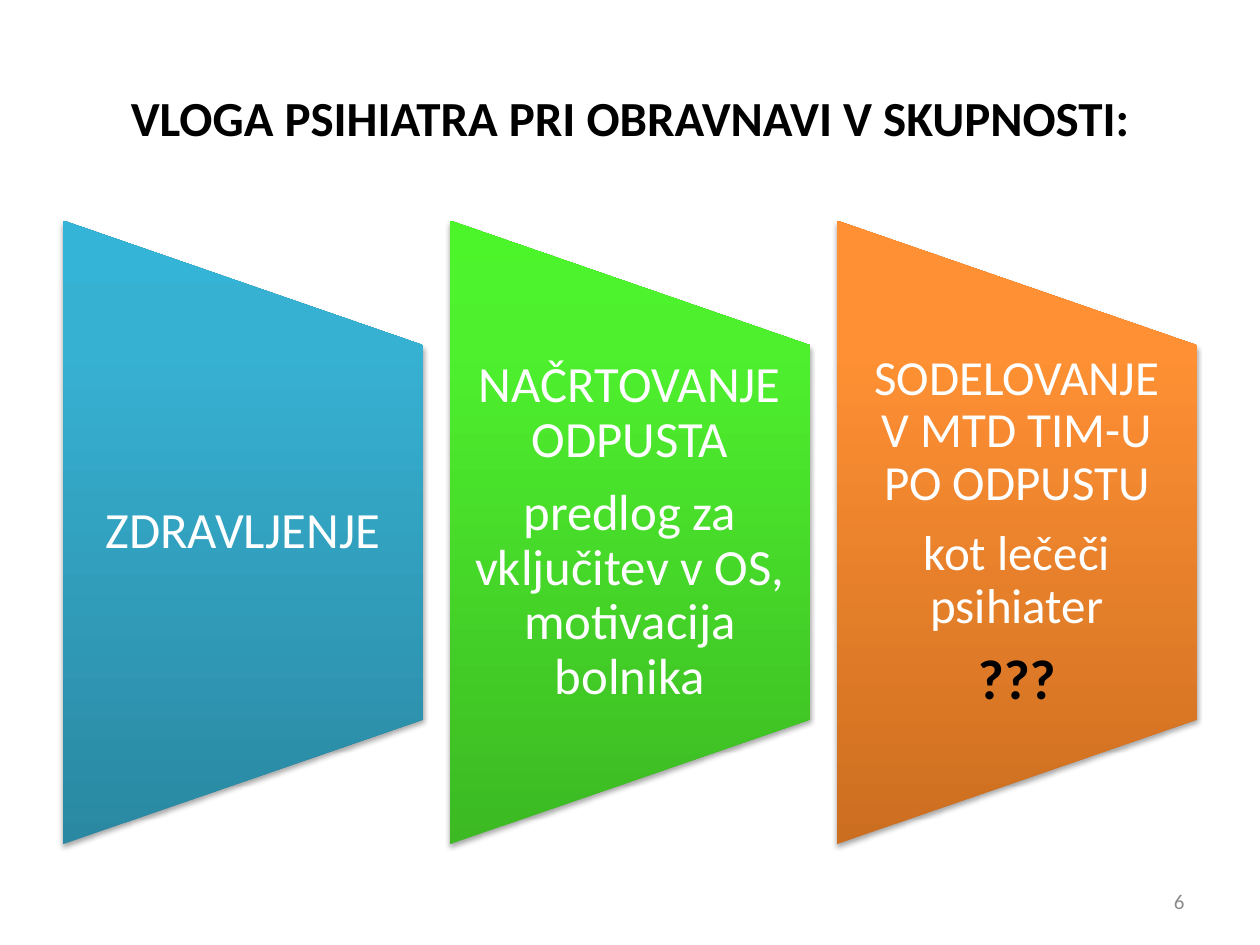
import pptx
import pptx.util
import pptx.dml.color
import pptx.enum.shapes
import pptx.enum.text
import lxml.etree

Inches = pptx.util.Inches
Pt = pptx.util.Pt
RGBColor = pptx.dml.color.RGBColor
Align = pptx.enum.text.PP_ALIGN

FONT = "Calibri"
BLACK = RGBColor(0, 0, 0)
WHITE = RGBColor(255, 255, 255)
GRAY = RGBColor(0x8C, 0x8C, 0x8C)
BLUES = (RGBColor(0x2A, 0x88, 0xA2), RGBColor(0x37, 0xB1, 0xD2), RGBColor(0x34, 0xB4, 0xD6))
GREENS = (RGBColor(0x3C, 0xB9, 0x23), RGBColor(0x4E, 0xF0, 0x2E), RGBColor(0x4C, 0xF5, 0x2A))
ORANGES = (RGBColor(0xCC, 0x6E, 0x20), RGBColor(0xFF, 0x90, 0x34), RGBColor(0xFF, 0x91, 0x36))

TITLE = "VLOGA PSIHIATRA PRI OBRAVNAVI V SKUPNOSTI:"
PAGE_NUMBER = "6"
ROLES = [
    (BLUES, [("ZDRAVLJENJE", 29, WHITE, False)]),
    (GREENS, [
        ("NAČRTOVANJE ODPUSTA", 29, WHITE, False),
        ("predlog za vključitev v OS, motivacija bolnika", 29, WHITE, False),
    ]),
    (ORANGES, [
        ("SODELOVANJE V MTD TIM-U PO ODPUSTU", 28, WHITE, False),
        ("kot lečeči psihiater", 28, WHITE, False),
        ("???", 32, BLACK, True),
    ]),
]

SLIDE_WIDTH, SLIDE_HEIGHT = 10, 7.5
MARGIN = 0.5
CONTENT_WIDTH = SLIDE_WIDTH - 2 * MARGIN
PANEL_WIDTH, PANEL_HEIGHT = 2.86, 4.95
PANEL_TOP = 1.75
PANEL_STEP = (CONTENT_WIDTH - PANEL_WIDTH) / (len(ROLES) - 1)
TEXT_HEIGHT = PANEL_HEIGHT * 0.6
TEXT_TOP = PANEL_TOP + (PANEL_HEIGHT - TEXT_HEIGHT) / 2

NAMESPACE = "http://schemas.openxmlformats.org/drawingml/2006/main"
GRADIENT = (
    '<a:gradFill xmlns:a="{}" rotWithShape="0"><a:gsLst>'
    '<a:gs pos="0"><a:srgbClr val="{}"/></a:gs>'
    '<a:gs pos="80000"><a:srgbClr val="{}"/></a:gs>'
    '<a:gs pos="100000"><a:srgbClr val="{}"/></a:gs>'
    '</a:gsLst><a:lin ang="16200000" scaled="0"/></a:gradFill>'
)
SHADOW = (
    '<a:effectLst xmlns:a="{}"><a:outerShdw blurRad="{}" dist="{}" dir="5400000" rotWithShape="0">'
    '<a:srgbClr val="000000"><a:alpha val="35000"/></a:srgbClr></a:outerShdw></a:effectLst>'
)


def add_text(slide, box, lines, alignment, inset=0.1, line_spacing=1.0, space_share=0):
    shape = slide.shapes.add_textbox(*[Inches(length) for length in box])
    frame = shape.text_frame
    frame.word_wrap = True
    frame.vertical_anchor = pptx.enum.text.MSO_ANCHOR.MIDDLE
    frame.margin_left = frame.margin_right = Inches(inset)
    frame.margin_top = frame.margin_bottom = 0
    for index, (text, size, color, bold) in enumerate(lines):
        paragraph = frame.add_paragraph() if index else frame.paragraphs[0]
        paragraph.alignment = alignment
        paragraph.line_spacing = line_spacing
        paragraph.space_after = Pt(size * space_share)
        run = paragraph.add_run()
        run.text = text
        run.font.name = FONT
        run.font.size = Pt(size)
        run.font.bold = bold
        run.font.color.rgb = color


def add_panel(slide, left, colors):
    shape = slide.shapes.add_shape(
        pptx.enum.shapes.MSO_SHAPE.FLOWCHART_MANUAL_OPERATION,
        Inches(left + (PANEL_WIDTH - PANEL_HEIGHT) / 2),
        Inches(PANEL_TOP + (PANEL_HEIGHT - PANEL_WIDTH) / 2),
        Inches(PANEL_HEIGHT),
        Inches(PANEL_WIDTH),
    )
    shape.rotation = 270
    shape.line.fill.background()
    properties = shape.element.spPr
    outline = properties.find("{%s}ln" % NAMESPACE)
    outline.addprevious(lxml.etree.fromstring(GRADIENT.format(NAMESPACE, *colors)))
    outline.addnext(lxml.etree.fromstring(SHADOW.format(NAMESPACE, Pt(3.1), Pt(1.8))))


def main():
    presentation = pptx.Presentation()
    presentation.slide_width = Inches(SLIDE_WIDTH)
    presentation.slide_height = Inches(SLIDE_HEIGHT)
    slide = presentation.slides.add_slide(presentation.slide_layouts[6])

    add_text(slide, (MARGIN, 0.3, CONTENT_WIDTH, 1.25), [(TITLE, 28, BLACK, True)], Align.CENTER)
    for index, (colors, lines) in enumerate(ROLES):
        left = MARGIN + index * PANEL_STEP
        add_panel(slide, left, colors)
        add_text(slide, (left, TEXT_TOP, PANEL_WIDTH, TEXT_HEIGHT), lines,
                 Align.CENTER, inset=0.2, line_spacing=0.9, space_share=0.35)
    number_width = 2.33
    add_text(slide, (SLIDE_WIDTH - MARGIN - number_width, 6.95, number_width, 0.4),
             [(PAGE_NUMBER, 12, GRAY, False)], Align.RIGHT)

    presentation.save("out.pptx")


if __name__ == "__main__":
    main()
